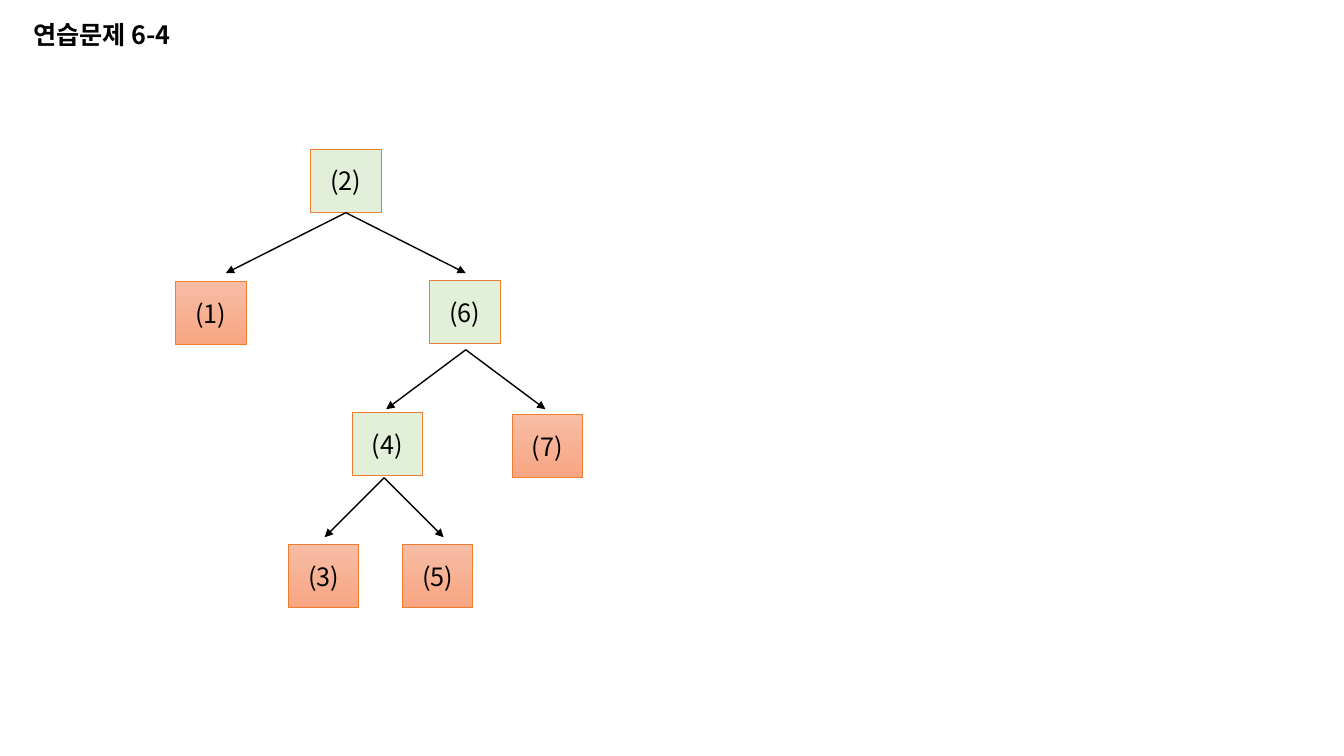
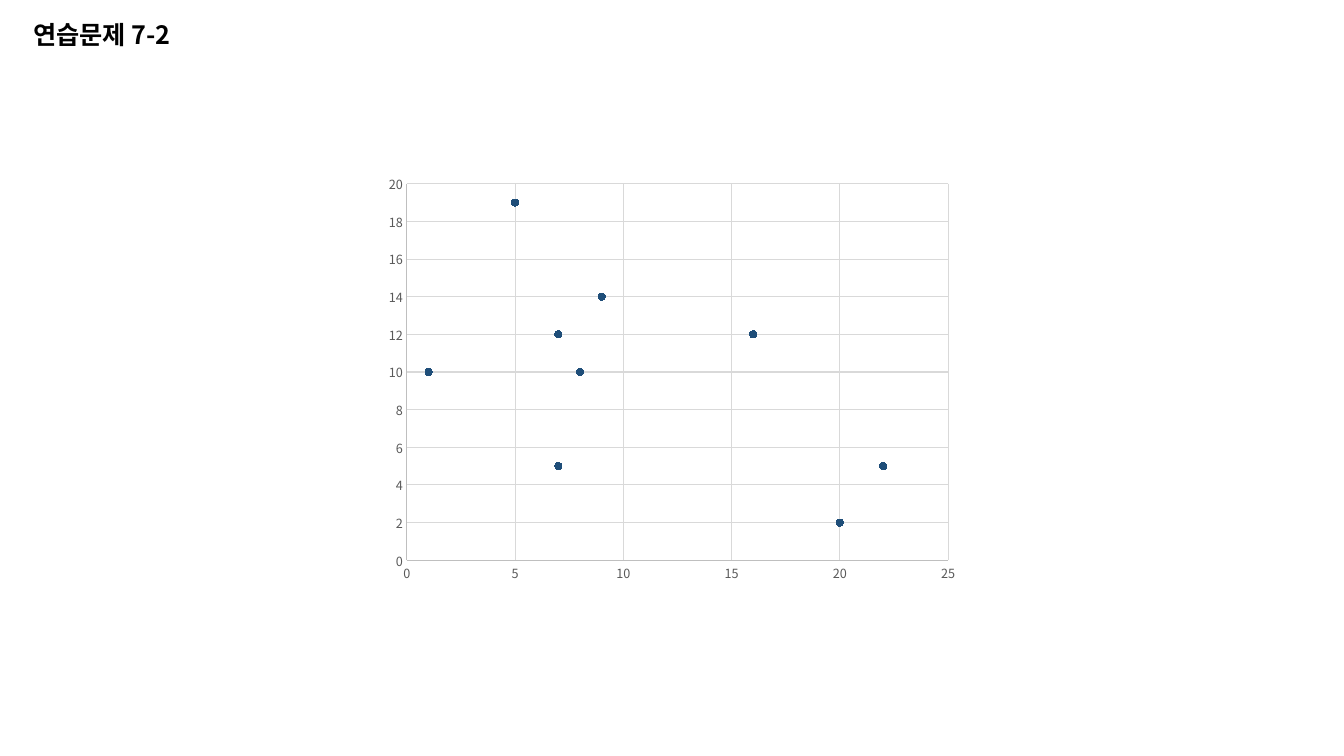
from lxml import etree
from pptx import Presentation
from pptx.chart.data import XyChartData
from pptx.dml.color import RGBColor
from pptx.enum.chart import XL_CHART_TYPE as CHART, XL_MARKER_STYLE as MARKER, XL_TICK_MARK as TICK
from pptx.enum.shapes import MSO_CONNECTOR as CONN, MSO_SHAPE as SHAPE
from pptx.enum.text import MSO_ANCHOR as ANCHOR, MSO_AUTO_SIZE as AUTO, PP_ALIGN as ALIGN
from pptx.oxml.ns import qn
from pptx.util import Inches, Pt

FONT = "Noto Sans CJK KR"
COLORS = {
    "text": "000000", "node": "E2F0D9", "leaf_top": "F7BDA5", "leaf_bottom": "F8A582",
    "border": "ED7D31", "dot": "1F4E79", "label": "595959", "axis": "BFBFBF", "grid": "D9D9D9",
}
NODE_W, NODE_H = 0.7, 0.63

INNER_NODES = [("(2)", 3.08, 1.48), ("(6)", 4.26, 2.78), ("(4)", 3.49, 4.09)]
LEAVES = [("(1)", 1.74, 2.79), ("(3)", 2.86, 5.4), ("(5)", 3.99, 5.4), ("(7)", 5.08, 4.11)]
# apex x, apex y, half width, node joined at the apex
FORKS = [(3.43, 2.12, 1.19, "(2)"), (4.62, 3.47, 0.79, None), (3.81, 4.74, 0.59, None)]
FORK_H = 0.59
POINTS = [(1, 10), (5, 19), (20, 2), (7, 5), (9, 14), (8, 10), (16, 12), (22, 5), (7, 12)]


def rgb(name):
    return RGBColor.from_string(COLORS[name])


class Deck:
    """Holds the shared style and the slide being built."""

    def __init__(self):
        self.prs = Presentation()
        self.prs.slide_width, self.prs.slide_height = Inches(13.33), Inches(7.5)
        self.s = None

    def slide(self, title):
        self.s = self.prs.slides.add_slide(self.prs.slide_layouts[6])
        tf = self.s.shapes.add_textbox(*map(Inches, (0.16, 0.14, 1.7, 0.4))).text_frame
        tf.word_wrap = False
        tf.auto_size = AUTO.SHAPE_TO_FIT_TEXT
        self.text(tf, title, bold=True)
        tf.paragraphs[0].space_after = Pt(8)

    def text(self, tf, text, bold=False):
        p = tf.paragraphs[0]
        p.alignment = ALIGN.CENTER
        r = p.add_run()
        r.text = text
        r.font.size, r.font.bold, r.font.name = Pt(18), bold, FONT
        r.font.color.rgb = rgb("text")
        etree.SubElement(r.font._element, qn("a:ea")).set("typeface", FONT)

    def node(self, text, x, y, leaf=False):
        sp = self.s.shapes.add_shape(SHAPE.RECTANGLE, *map(Inches, (x, y, NODE_W, NODE_H)))
        sp.shadow.inherit = False
        if leaf:
            sp.fill.gradient()
            sp.fill.gradient_angle = 270
            for stop, color in zip(sp.fill.gradient_stops, ("leaf_top", "leaf_bottom")):
                stop.color.rgb = rgb(color)
        else:
            sp.fill.solid()
            sp.fill.fore_color.rgb = rgb("node")
        sp.line.color.rgb = rgb("border")
        sp.line.width = Pt(0.5)
        sp.text_frame.vertical_anchor = ANCHOR.MIDDLE
        self.text(sp.text_frame, text)
        return sp

    def arrow(self, x1, y1, x2, y2, source=None):
        line = self.s.shapes.add_connector(CONN.STRAIGHT, *map(Inches, (x1, y1, x2, y2)))
        if source is not None:
            line.begin_connect(source, 2)
        line.line.color.rgb = rgb("text")
        line.line.width = Pt(1)
        sp_pr = line._element.spPr
        etree.SubElement(sp_pr.find(qn("a:ln")), qn("a:tailEnd")).set("type", "triangle")
        etree.SubElement(sp_pr, qn("a:effectLst"))

    def fork(self, x, y, half_width, source=None):
        """Draw a pair of arrows spreading down from one apex."""
        for dx in (-half_width, half_width):
            self.arrow(x, y, x + dx, y + FORK_H, source)

    def axis(self, axis, top, step):
        axis.minimum_scale, axis.maximum_scale, axis.major_unit = 0, top, step
        axis.major_tick_mark = axis.minor_tick_mark = TICK.NONE
        axis.has_major_gridlines = True
        for line, color in ((axis.format.line, "axis"), (axis.major_gridlines.format.line, "grid")):
            line.color.rgb = rgb(color)
            line.width = Pt(0.75)
        labels = axis.tick_labels
        labels.number_format, labels.number_format_is_linked = "General", False
        labels.font.size, labels.font.name = Pt(9), FONT
        labels.font.color.rgb = rgb("label")

    def scatter(self, points, x, y, w, h):
        data = XyChartData()
        series = data.add_series("Series 1")
        for point in points:
            series.add_data_point(*point)
        chart = self.s.shapes.add_chart(CHART.XY_SCATTER, *map(Inches, (x, y, w, h)), data).chart
        chart.has_title = chart.has_legend = False
        chart.font.size, chart.font.name = Pt(10), FONT
        chart.font.color.rgb = rgb("text")
        plot = chart.plots[0]
        plot.vary_by_categories = False
        dots = plot.series[0]
        dots.smooth = False
        dots.format.line.fill.background()
        dots.marker.style, dots.marker.size = MARKER.CIRCLE, 5
        dots.marker.format.fill.solid()
        dots.marker.format.fill.fore_color.rgb = rgb("dot")
        dots.marker.format.line.color.rgb = rgb("dot")
        self.axis(chart.category_axis, 25, 5)
        self.axis(chart.value_axis, 20, 2)


def main():
    deck = Deck()

    deck.slide("연습문제 6-4")
    nodes = {text: deck.node(text, x, y) for text, x, y in INNER_NODES}
    for leaf in LEAVES:
        deck.node(*leaf, leaf=True)
    for x, y, half_width, source in FORKS:
        deck.fork(x, y, half_width, nodes.get(source))

    deck.slide("연습문제 7-2")
    deck.scatter(POINTS, 3.74, 1.65, 5.85, 4.21)

    deck.prs.save("out.pptx")


if __name__ == "__main__":
    main()
